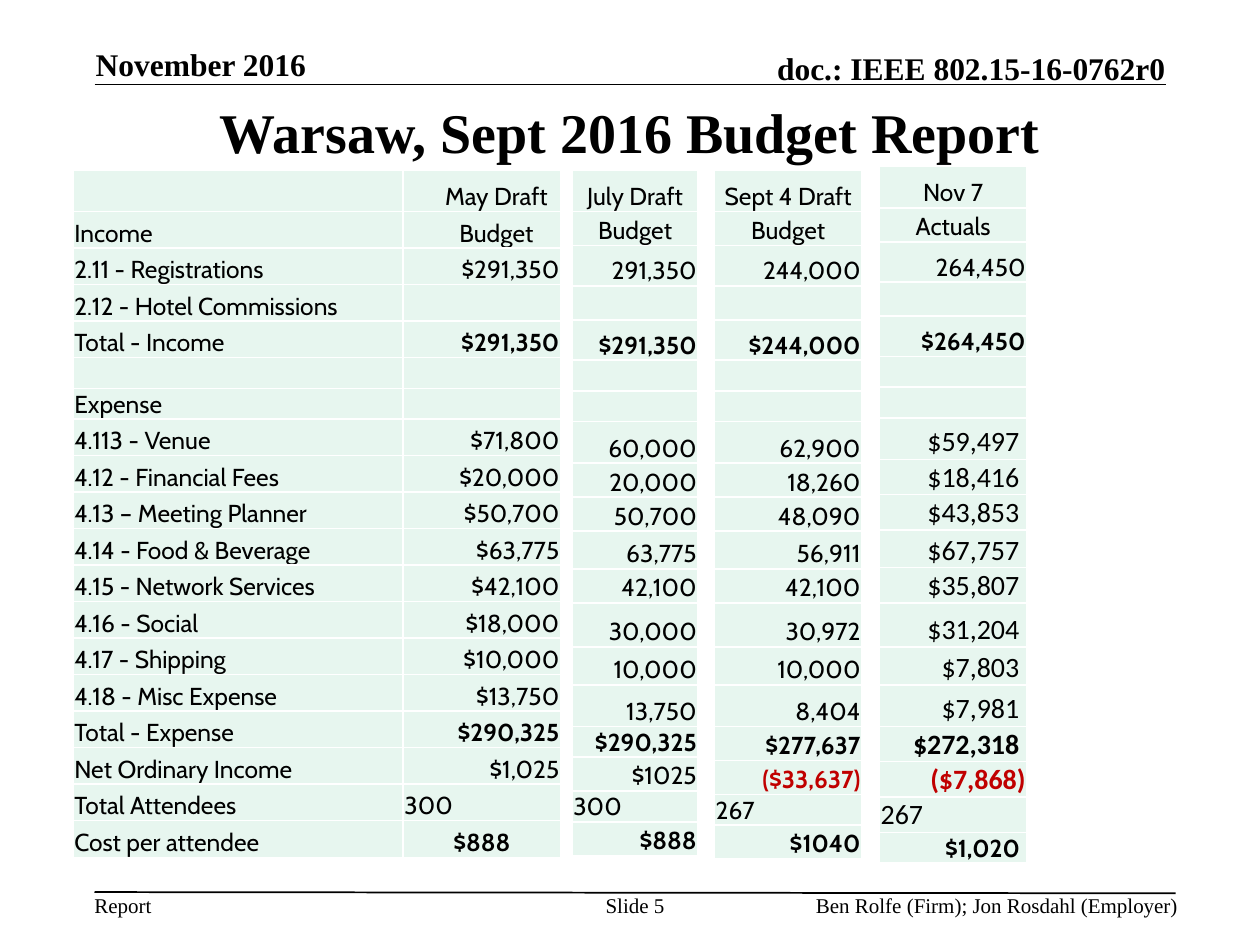
from lxml import etree
from pptx import Presentation
from pptx.dml.color import RGBColor
from pptx.enum.shapes import MSO_CONNECTOR
from pptx.enum.text import MSO_ANCHOR, PP_ALIGN
from pptx.oxml.ns import qn
from pptx.util import Inches, Pt

COLORS = {"text": "000000", "loss": "C00000", "cell": "E7F6EF", "border": "FFFFFF"}
SERIF, TABLE_FONT, ACTUALS_FONT = "Times New Roman", "Cabin", "Calibri"
LEFT, CENTER, RIGHT = PP_ALIGN.LEFT, PP_ALIGN.CENTER, PP_ALIGN.RIGHT

# Budget rows
LABELS = ["", "Income", "2.11 - Registrations", "2.12 - Hotel Commissions",
          "Total - Income", "", "Expense", "4.113 - Venue", "4.12 - Financial Fees",
          "4.13 – Meeting Planner", "4.14 - Food & Beverage",
          "4.15 - Network Services", "4.16 - Social", "4.17 - Shipping",
          "4.18 - Misc Expense", "Total - Expense", "Net Ordinary Income",
          "Total Attendees", "Cost per attendee"]
MAY = ["May Draft", "Budget", "$291,350", "", "$291,350", "", "", "$71,800",
       "$20,000", "$50,700", "$63,775", "$42,100", "$18,000", "$10,000",
       "$13,750", "$290,325", "$1,025", "300", "$888"]
JULY = ["July Draft", "Budget", "291,350", "", "$291,350", "", "", "60,000",
        "20,000", "50,700", "63,775", "42,100", "30,000", "10,000", "13,750",
        "$290,325", "$1025", "300", "$888"]
SEPT = ["Sept 4 Draft", "Budget", "244,000", "", "$244,000", "", "", "62,900",
        "18,260", "48,090", "56,911", "42,100", "30,972", "10,000", "8,404",
        "$277,637", "($33,637)", "267", "$1040"]
ACTUALS = ["Nov 7", "Actuals", "264,450", "", "$264,450", "", "", "$59,497 ",
           "$18,416 ", "$43,853 ", "$67,757 ", "$35,807 ", "$31,204 ", "$7,803 ",
           "$7,981 ", "$272,318 ", "($7,868)", "267", "$1,020 "]
VENUE, ATTENDEES, COST = (LABELS.index(name) for name in
                          ("4.113 - Venue", "Total Attendees", "Cost per attendee"))
BOLD_ROWS = {LABELS.index("Total - Income"), LABELS.index("Total - Expense"), COST}

# Row heights: an even grid for the first table, a shared uneven one for the rest
MAY_HEIGHTS = [0.33] + [0.29] * 4 + [0.24] * 2 + [0.29] * 12
UPPER = [0.33, 0.27, 0.32, 0.27, 0.32, 0.24, 0.24, 0.33]
EXPENSES = [0.27, 0.27, 0.3, 0.27, 0.35, 0.3, 0.33]
JULY_HEIGHTS = UPPER + EXPENSES + [0.24, 0.27, 0.24, 0.27]
SEPT_HEIGHTS = UPPER + EXPENSES + [0.27, 0.27, 0.24, 0.27]
ACTUALS_HEIGHTS = UPPER + [max(h, 0.28) for h in EXPENSES] + [0.28] * 3 + [0.24]


class ReportSlide:
    def __init__(self, deck):
        self.slide = deck.slides.add_slide(deck.slide_layouts[5])

    def style(self, font, size, name, bold=False, color="text"):
        font.size, font.name, font.bold = Pt(size), name, bold
        font.color.rgb = RGBColor.from_string(COLORS[color])

    def title(self, text, left, top, width, height):
        title = self.slide.shapes.title
        title.left, title.top = Inches(left), Inches(top)
        title.width, title.height = Inches(width), Inches(height)
        title.text_frame.vertical_anchor = MSO_ANCHOR.MIDDLE
        paragraph = title.text_frame.paragraphs[0]
        paragraph.alignment = CENTER
        run = paragraph.add_run()
        run.text = text
        self.style(run.font, 32, SERIF, bold=True)

    def text(self, text, left, top, width, height, size=12, align=LEFT,
             bold=False, anchor=MSO_ANCHOR.TOP):
        box = self.slide.shapes.add_textbox(
            Inches(left), Inches(top), Inches(width), Inches(height))
        frame = box.text_frame
        frame.word_wrap = True
        frame.vertical_anchor = anchor
        frame.margin_left = frame.margin_right = 0
        frame.margin_top = frame.margin_bottom = 0
        paragraph = frame.paragraphs[0]
        paragraph.alignment = align
        run = paragraph.add_run()
        run.text = text
        self.style(run.font, size, SERIF, bold)

    def rule(self, x1, y1, x2, y2):
        line = self.slide.shapes.add_connector(
            MSO_CONNECTOR.STRAIGHT, Inches(x1), Inches(y1), Inches(x2), Inches(y2))
        line.line.color.rgb = RGBColor.from_string(COLORS["text"])
        line.line.width = Pt(1)
        etree.SubElement(line._element.spPr, qn("a:effectLst"))

    def table(self, left, top, widths, heights, columns):
        table = self.slide.shapes.add_table(
            len(heights), len(widths), Inches(left), Inches(top),
            Inches(sum(widths)), Inches(sum(heights))).table
        table.first_row = table.horz_banding = False
        for column, width in zip(table.columns, widths):
            column.width = Inches(width)
        for row, height in zip(table.rows, heights):
            row.height = Inches(height)
        for c, values in enumerate(columns):
            for r, value in enumerate(values):
                self.cell(table.cell(r, c), r, value, values)

    def cell(self, cell, row, value, values):
        cell.margin_left = cell.margin_right = cell.margin_top = Inches(0.01)
        cell.margin_bottom = 0
        cell.vertical_anchor = MSO_ANCHOR.BOTTOM
        self.borders(cell)
        cell.fill.solid()
        cell.fill.fore_color.rgb = RGBColor.from_string(COLORS["cell"])
        paragraph = cell.text_frame.paragraphs[0]
        if not value:
            etree.SubElement(paragraph._p, qn("a:endParaRPr"), sz="1400")
            return
        is_label, is_may = values is LABELS, values is MAY
        if is_label or row == ATTENDEES:
            paragraph.alignment = LEFT
        elif row < 2 or (is_may and row == COST):
            paragraph.alignment = CENTER
        else:
            paragraph.alignment = RIGHT
        if is_may and row < 2:
            cell.margin_left = Inches(0.24)
        loss = value.startswith("(")
        bold = loss or (row in BOLD_ROWS and not is_label)
        calibri = values is ACTUALS and VENUE <= row < COST
        size, name = (16, ACTUALS_FONT) if calibri else (14, TABLE_FONT)
        run = paragraph.add_run()
        run.text = value
        self.style(run.font, size, name, bold, "loss" if loss else "text")

    def borders(self, cell):
        properties = cell._tc.get_or_add_tcPr()
        for side in ("a:lnL", "a:lnR", "a:lnT", "a:lnB"):
            line = etree.SubElement(properties, qn(side), w=str(Pt(1)))
            fill = etree.SubElement(line, qn("a:solidFill"))
            etree.SubElement(fill, qn("a:srgbClr"), val=COLORS["border"])


def main():
    deck = Presentation()
    deck.slide_width, deck.slide_height = Inches(10), Inches(7.5)
    report = ReportSlide(deck)

    # Header and title
    heading = {"size": 18, "bold": True, "anchor": MSO_ANCHOR.BOTTOM}
    report.rule(0.75, 0.67, 9.25, 0.67)
    report.text("doc.: IEEE 802.15-16-0762r0", 3.92, 0.39, 5.33, 0.3,
                align=RIGHT, **heading)
    report.text("November 2016", 0.76, 0.36, 2.05, 0.3, **heading)
    report.title("Warsaw, Sept 2016 Budget Report", 0.75, 0.75, 8.5, 0.58)

    # Footer
    report.rule(0.75, 7.08, 9.33, 7.09)
    report.text("Report", 0.75, 7.08, 0.46, 0.2)
    report.text("Slide 5", 4.75, 7.08, 0.58, 0.4, align=CENTER)
    report.text("Ben Rolfe (Firm); Jon Rosdahl (Employer)", 6.17, 7.08, 3.18, 0.25,
                align=RIGHT)

    # Budget drafts and actuals
    report.table(0.58, 1.35, [2.62, 1.25], MAY_HEIGHTS, [LABELS, MAY])
    report.table(4.54, 1.35, [1], JULY_HEIGHTS, [JULY])
    report.table(5.67, 1.35, [1.17], SEPT_HEIGHTS, [SEPT])
    report.table(6.98, 1.32, [1.17], ACTUALS_HEIGHTS, [ACTUALS])

    deck.save("out.pptx")


if __name__ == "__main__":
    main()
